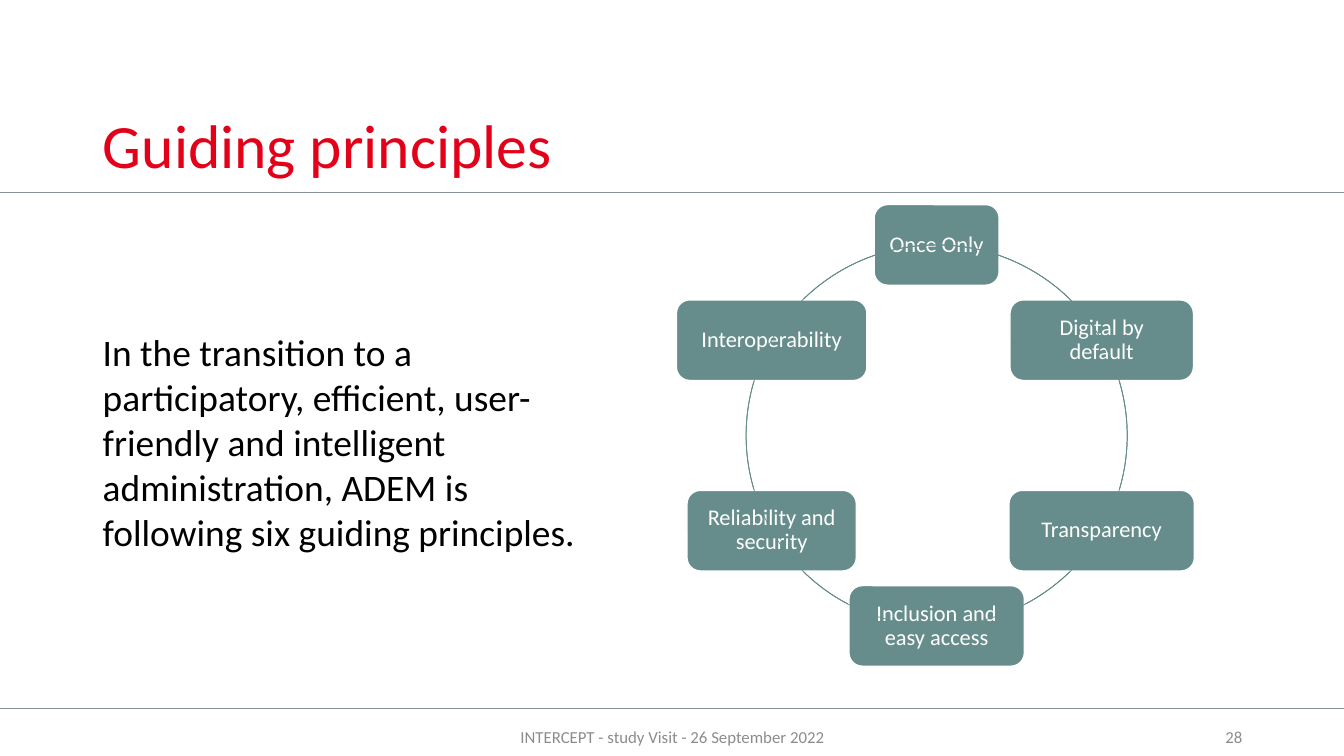
from math import cos, radians, sin

from lxml.etree import SubElement
from pptx import Presentation
from pptx.dml.color import RGBColor
from pptx.enum.shapes import MSO_CONNECTOR, MSO_SHAPE
from pptx.enum.text import MSO_ANCHOR, MSO_AUTO_SIZE, PP_ALIGN
from pptx.oxml.ns import qn
from pptx.util import Inches, Pt

TITLE = "Guiding principles"
INTRO = ("In the transition to a participatory, efficient, user-friendly and "
         "intelligent administration, ADEM is following six guiding principles.")
FOOTER = "INTERCEPT - study Visit - 26 September 2022"
PAGE = "28"

# Clockwise from the top: label, box width, start and end angle of the arc after it
PRINCIPLES = [
    ("Once Only", 1.24, 289.4, 314.4),
    ("Digital by default", 1.82, 343.7, 16.3),
    ("Transparency", 1.84, 45.6, 62.2),
    ("Inclusion and easy access", 1.74, 117.8, 134.4),
    ("Reliability and security", 1.68, 163.7, 196.3),
    ("Interoperability", 1.89, 225.6, 250.6),
]
COLORS = {"title": "E30019", "body": "000000", "teal": "668D8C",
          "white": "FFFFFF", "rule": "87919A", "footer": "8C8C8C"}
FONT = "Calibri"
SLIDE_W, SLIDE_H = 13.33, 7.5
RULE_YS = (1.91, 7.03)
RING_X, RING_Y, RADIUS = 9.29, 4.32, 1.89
BOX_H = 0.8


def color(name):
    return RGBColor.from_string(COLORS[name])


def write(frame, text, size, color_name, align=PP_ALIGN.LEFT,
          anchor=MSO_ANCHOR.TOP, spacing=None):
    frame.word_wrap = True
    frame.auto_size = MSO_AUTO_SIZE.NONE
    frame.vertical_anchor = anchor
    paragraph = frame.paragraphs[0]
    paragraph.alignment = align
    paragraph.line_spacing = spacing
    run = paragraph.add_run()
    run.text = text
    run.font.name = FONT
    run.font.size = Pt(size)
    run.font.color.rgb = color(color_name)


def add_text(slide, box, *args, **options):
    label = slide.shapes.add_textbox(*map(Inches, box))
    write(label.text_frame, *args, **options)


def add_rule(slide, y):
    rule = slide.shapes.add_connector(
        MSO_CONNECTOR.STRAIGHT, 0, Inches(y), Inches(SLIDE_W), Inches(y))
    rule.line.color.rgb = color("rule")
    rule.line.width = Pt(0.5)
    SubElement(rule._element.spPr, qn("a:effectLst"))


def add_principle(slide, label, width, angle):
    """Add a box centred on the ring, angle in degrees clockwise from the top."""
    x = RING_X + RADIUS * sin(radians(angle))
    y = RING_Y - RADIUS * cos(radians(angle))
    box = slide.shapes.add_shape(
        MSO_SHAPE.ROUNDED_RECTANGLE, Inches(x - width / 2), Inches(y - BOX_H / 2),
        Inches(width), Inches(BOX_H))
    box.shadow.inherit = False
    box.fill.solid()
    box.fill.fore_color.rgb = color("teal")
    box.line.color.rgb = color("white")
    box.line.width = Pt(1)
    frame = box.text_frame
    frame.margin_left = frame.margin_right = Inches(0.11)
    frame.margin_top = frame.margin_bottom = Inches(0.11)
    write(frame, label, 16, "white", PP_ALIGN.CENTER, MSO_ANCHOR.MIDDLE, 0.9)


def add_arc(slide, start, end):
    """Add a piece of the ring, angles in degrees clockwise from the right."""
    arc = slide.shapes.add_shape(
        MSO_SHAPE.ARC, Inches(RING_X - RADIUS), Inches(RING_Y - RADIUS),
        Inches(2 * RADIUS), Inches(2 * RADIUS))
    arc.shadow.inherit = False
    arc.fill.background()
    arc.line.color.rgb = color("teal")
    arc.line.width = Pt(0.5)
    # Angles are stored in 1/60000 degree, adjustments in 1/100000
    for index, degrees in enumerate((start, end)):
        if degrees > 180:
            degrees -= 360
        arc.adjustments[index] = degrees * 0.6


def main():
    deck = Presentation()
    deck.slide_width, deck.slide_height = Inches(SLIDE_W), Inches(SLIDE_H)
    slide = deck.slides.add_slide(deck.slide_layouts[5])

    title = slide.shapes.title
    title.left, title.top = Inches(0.92), Inches(0.4)
    title.width, title.height = Inches(9.85), Inches(1.45)
    write(title.text_frame, TITLE, 44, "title", anchor=MSO_ANCHOR.BOTTOM, spacing=0.9)

    for y in RULE_YS:
        add_rule(slide, y)
    add_text(slide, (0.92, 3.22, 4.92, 2.35), INTRO, 26.7, "body")

    step = 360 / len(PRINCIPLES)
    for index, (label, width, start, end) in enumerate(PRINCIPLES):
        add_principle(slide, label, width, index * step)
        add_arc(slide, start, end)

    add_text(slide, (4.42, 7.11, 4.5, 0.4), FOOTER, 12, "footer",
             PP_ALIGN.CENTER, MSO_ANCHOR.MIDDLE)
    add_text(slide, (9.42, 7.11, 3, 0.4), PAGE, 12, "footer",
             PP_ALIGN.RIGHT, MSO_ANCHOR.MIDDLE)
    deck.save("out.pptx")


if __name__ == "__main__":
    main()
